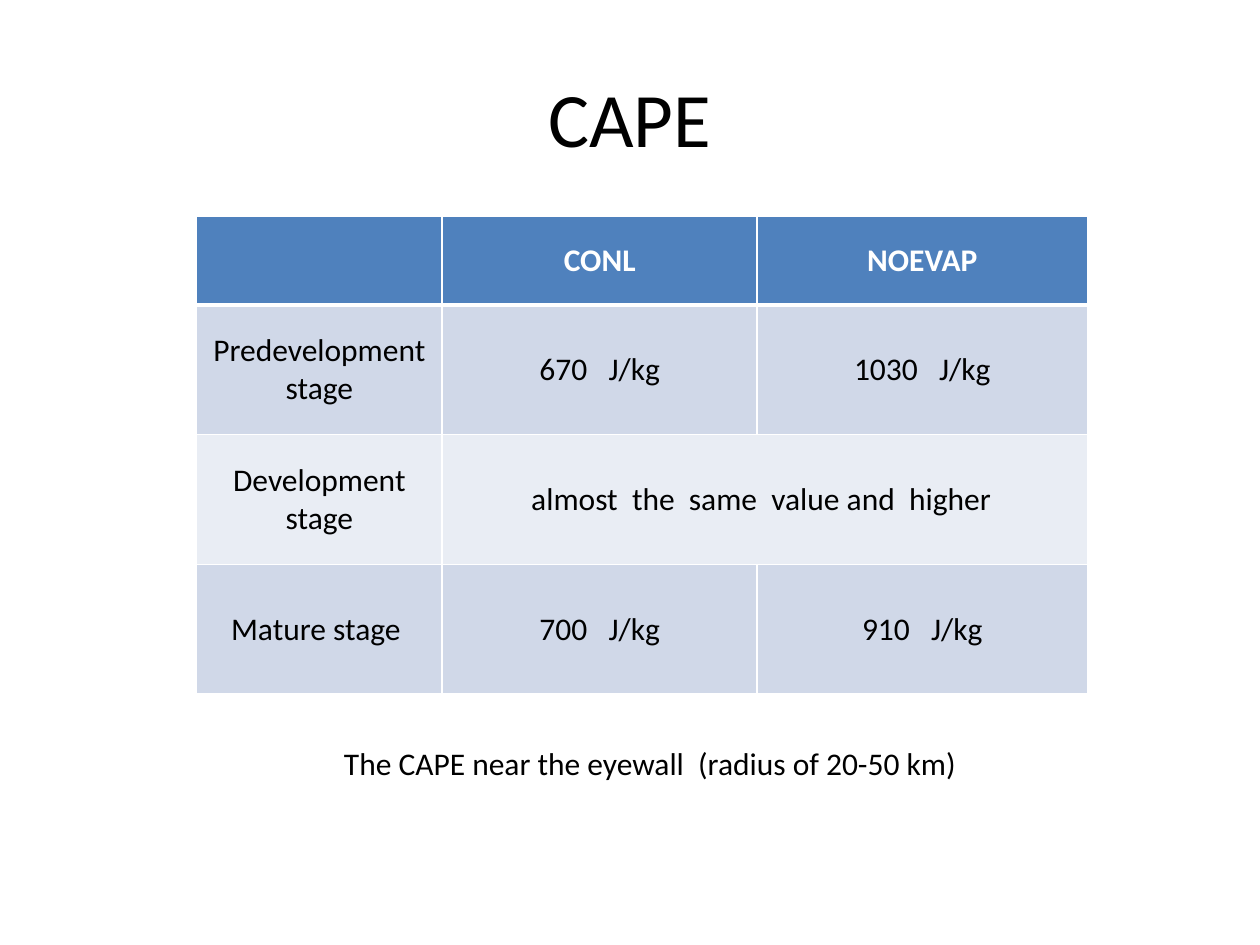
from pptx import Presentation
from pptx.dml.color import RGBColor
from pptx.enum.text import MSO_ANCHOR, PP_ALIGN
from pptx.oxml.xmlchemy import OxmlElement
from pptx.util import Inches, Pt

COLORS = {
    "text": "000000",
    "white": "FFFFFF",
    "header": "4F81BD",
    "band_dark": "D0D8E8",
    "band_light": "E9EDF4",
}
COLUMN_WIDTHS = [1.95, 2.5, 2.62]
ROW_HEIGHTS = [0.7, 1.03, 1.03, 1.03]
CAPE_ROWS = [
    ["", "CONL", "NOEVAP"],
    ["Predevelopment stage", "670   J/kg", "1030   J/kg"],
    ["Development stage", "almost  the  same  value and  higher ", ""],
    ["Mature stage ", "700   J/kg", "910   J/kg"],
]


class SlideBuilder:
    """Holds the style and the current slide."""

    font = "Calibri"
    body_size = 18

    def __init__(self, page):
        self.page = page

    def fill_text(self, frame, text, size, color="text", bold=False):
        frame.text = text
        for paragraph in frame.paragraphs:
            paragraph.alignment = PP_ALIGN.CENTER
            for span in paragraph.runs:
                span.font.name = self.font
                span.font.size = Pt(size)
                span.font.bold = bold
                span.font.color.rgb = RGBColor.from_string(COLORS[color])

    def text(self, text, left, top, width, height, size, anchor=MSO_ANCHOR.TOP):
        box = self.page.shapes.add_textbox(
            Inches(left), Inches(top), Inches(width), Inches(height))
        box.text_frame.word_wrap = True
        box.text_frame.vertical_anchor = anchor
        self.fill_text(box.text_frame, text, size)

    def border(self, cell, side, width):
        line = OxmlElement(f"a:ln{side}")
        line.set("w", str(Pt(width)))
        fill = OxmlElement("a:solidFill")
        color = OxmlElement("a:srgbClr")
        color.set("val", COLORS["white"])
        fill.append(color)
        line.append(fill)
        cell._tc.get_or_add_tcPr().append(line)

    def cell(self, cell, text, row):
        is_header = row == 0
        # Borders come before the fill in the cell properties
        heavy_side = {0: "B", 1: "T"}.get(row)
        for side in "LRTB":
            self.border(cell, side, 3 if side == heavy_side else 1)
        band = "band_dark" if row % 2 else "band_light"
        cell.fill.solid()
        cell.fill.fore_color.rgb = RGBColor.from_string(
            COLORS["header" if is_header else band])
        cell.vertical_anchor = MSO_ANCHOR.MIDDLE
        self.fill_text(cell.text_frame, text, self.body_size,
                       "white" if is_header else "text", is_header)

    def table(self, rows, left, top, widths, heights):
        table = self.page.shapes.add_table(
            len(heights), len(widths), Inches(left), Inches(top),
            Inches(sum(widths)), Inches(sum(heights))).table
        for column, width in zip(table.columns, widths):
            column.width = Inches(width)
        for row, height in zip(table.rows, heights):
            row.height = Inches(height)
        for row, texts in enumerate(rows):
            for column, text in enumerate(texts):
                self.cell(table.cell(row, column), text, row)
        return table


def main():
    deck = Presentation()
    deck.slide_width, deck.slide_height = Inches(10), Inches(7.5)
    builder = SlideBuilder(deck.slides.add_slide(deck.slide_layouts[6]))

    # Title
    builder.text("CAPE", 0.5, 0.3, 9, 1.25, 44, MSO_ANCHOR.MIDDLE)

    # CAPE values by stage; the development stage shares one value cell
    table = builder.table(CAPE_ROWS, 1.56, 1.72, COLUMN_WIDTHS, ROW_HEIGHTS)
    table.cell(2, 1).merge(table.cell(2, 2))

    # Caption
    builder.text("The CAPE near the eyewall  (radius of 20-50 km)",
                 1.8, 5.86, 6.72, 0.4, builder.body_size)

    deck.save("out.pptx")


if __name__ == "__main__":
    main()
